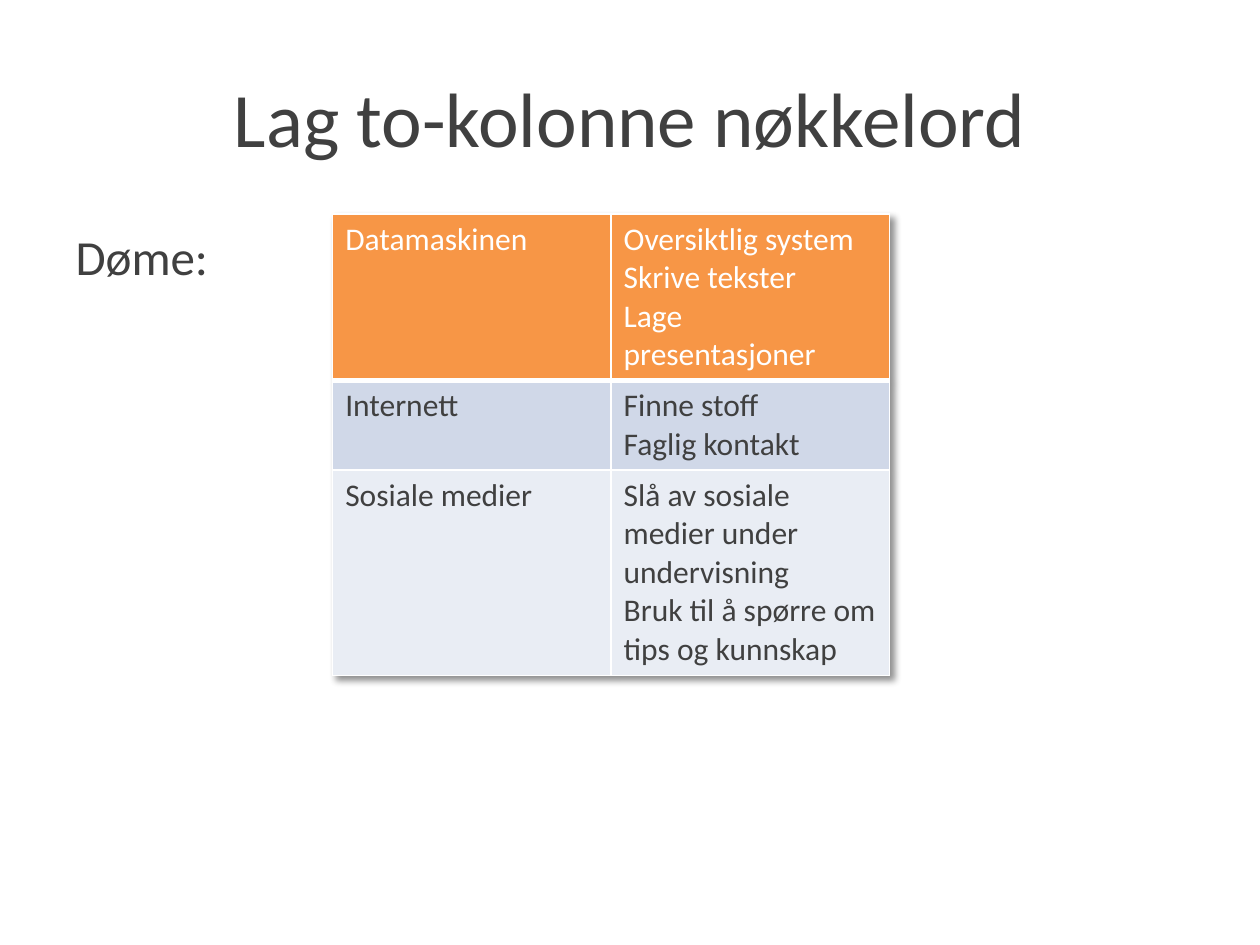
from lxml import etree
from pptx import Presentation
from pptx.dml.color import RGBColor
from pptx.enum.text import MSO_ANCHOR, PP_ALIGN
from pptx.oxml.ns import qn
from pptx.util import Inches, Pt

CENTER = PP_ALIGN.CENTER
MIDDLE = MSO_ANCHOR.MIDDLE
FONT = "Calibri"
DARK, WHITE = "404040", "FFFFFF"

TITLE = "Lag to-kolonne nøkkelord"
EXAMPLE = "Døme:"
# keyword, notes, row height, fill, text colour, bottom border in points
KEYWORD_ROWS = [
    ("Datamaskinen", ["Oversiktlig system", "Skrive tekster", "Lage presentasjoner"],
     1.32, "F79646", WHITE, 3),
    ("Internett", ["Finne stoff", "Faglig kontakt"], 0.71, "D0D8E8", DARK, 1),
    ("Sosiale medier", ["Slå av sosiale medier under undervisning",
                        "Bruk til å spørre om tips og kunnskap"],
     1.63, "E9EDF4", DARK, 1),
]
TABLE_LEFT, TABLE_TOP, COLUMN_WIDTH = 2.64, 1.7, 2.21


def rgb(value):
    return RGBColor.from_string(value)


def style(paragraph, size, color):
    paragraph.font.name = FONT
    paragraph.font.size = Pt(size)
    paragraph.font.color.rgb = rgb(color)


def place(shape, left, top, width, height):
    shape.left, shape.top = Inches(left), Inches(top)
    shape.width, shape.height = Inches(width), Inches(height)


def add_color(parent, value):
    return etree.SubElement(parent, qn("a:srgbClr"), val=value)


def add_borders(cell, bottom):
    """Put white lines round a cell; they must precede its fill in the XML."""
    properties = cell._tc.get_or_add_tcPr()
    for index, (side, points) in enumerate(
            [("lnL", 1), ("lnR", 1), ("lnT", 1), ("lnB", bottom)]):
        line = etree.Element(qn(f"a:{side}"), w=str(Pt(points)))
        add_color(etree.SubElement(line, qn("a:solidFill")), WHITE)
        properties.insert(index, line)


def add_shadow(table):
    effects = etree.Element(qn("a:effectLst"))
    shadow = etree.SubElement(effects, qn("a:outerShdw"), blurRad="50800",
                              dist="38100", dir="2700000", algn="tl", rotWithShape="0")
    etree.SubElement(add_color(shadow, "000000"), qn("a:alpha"), val="43000")
    table._tbl.tblPr.insert(0, effects)


def fill_cell(cell, lines, fill, color, bottom):
    cell.text = "\n".join(lines)
    for paragraph in cell.text_frame.paragraphs:
        style(paragraph, 18, color)
    cell.fill.solid()
    cell.fill.fore_color.rgb = rgb(fill)
    add_borders(cell, bottom)


prs = Presentation()
prs.slide_width, prs.slide_height = Inches(10), Inches(7.5)
slide = prs.slides.add_slide(prs.slide_layouts[1])

title = slide.shapes.title
place(title, 0.5, 0.3, 9, 1.25)
title.text_frame.text = TITLE
title.text_frame.vertical_anchor = MIDDLE
heading = title.text_frame.paragraphs[0]
heading.alignment = CENTER
style(heading, 44, DARK)

body = slide.placeholders[1]
place(body, 0.5, 1.75, 4.42, 4.95)
body.text_frame.text = EXAMPLE
example = body.text_frame.paragraphs[0]
example_properties = example._p.get_or_add_pPr()
example_properties.set("marL", "0")
example_properties.set("indent", "0")
etree.SubElement(example_properties, qn("a:buNone"))
style(example, 28, DARK)

keywords = slide.shapes.add_table(
    len(KEYWORD_ROWS), 2, Inches(TABLE_LEFT), Inches(TABLE_TOP),
    Inches(2 * COLUMN_WIDTH), Inches(sum(row[2] for row in KEYWORD_ROWS))).table
keywords.first_row = keywords.horz_banding = False
add_shadow(keywords)
for column in keywords.columns:
    column.width = Inches(COLUMN_WIDTH)
for index, (keyword, notes, height, fill, color, bottom) in enumerate(KEYWORD_ROWS):
    keywords.rows[index].height = Inches(height)
    for column_index, lines in enumerate([[keyword], notes]):
        fill_cell(keywords.cell(index, column_index), lines, fill, color, bottom)

prs.save("out.pptx")
